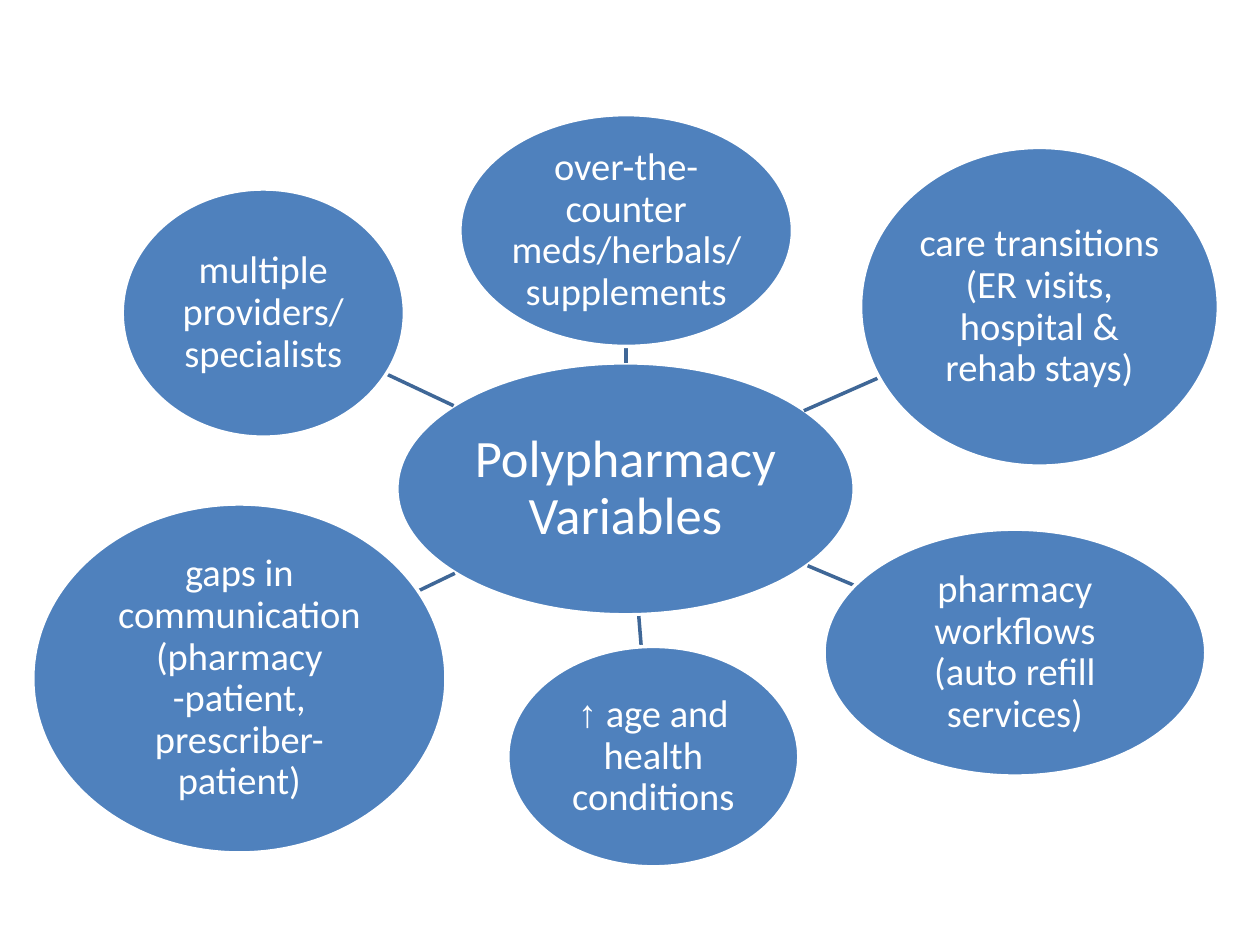
from dataclasses import dataclass

from pptx import Presentation
from pptx.dml.color import RGBColor
from pptx.enum.shapes import MSO_CONNECTOR, MSO_SHAPE
from pptx.enum.text import MSO_ANCHOR, PP_ALIGN
from pptx.oxml.ns import qn
from pptx.util import Inches, Pt


@dataclass(frozen=True)
class Theme:
    bubble: RGBColor = RGBColor(0x4F, 0x81, 0xBD)
    spoke: RGBColor = RGBColor(0x3F, 0x67, 0x97)
    white: RGBColor = RGBColor(0xFF, 0xFF, 0xFF)
    font: str = "Calibri"
    symbol_font: str = "Arial"
    hub_size: int = 30
    bubble_size: int = 22
    line_width: int = 2


class DiagramPage:
    def __init__(self, deck, theme):
        self.theme = theme
        self.page = deck.slides.add_slide(deck.slide_layouts[6])

    def bubble(self, spans, area, size):
        theme = self.theme
        shape = self.page.shapes.add_shape(MSO_SHAPE.OVAL, *map(Inches, area))
        shape.shadow.inherit = False
        shape.fill.solid()
        shape.fill.fore_color.rgb = theme.bubble
        shape.line.color.rgb = theme.white
        shape.line.width = Pt(theme.line_width)

        frame = shape.text_frame
        frame.word_wrap = True
        frame.vertical_anchor = MSO_ANCHOR.MIDDLE
        frame.margin_left = frame.margin_right = Inches(0.02)
        frame.margin_top = frame.margin_bottom = Inches(0.02)

        paragraph = frame.paragraphs[0]
        paragraph.alignment = PP_ALIGN.CENTER
        paragraph.line_spacing = 0.9
        paragraph.font.size = Pt(size)
        paragraph.font.color.rgb = theme.white
        paragraph.font.name = theme.font
        for index, line in enumerate(spans):
            if index:
                paragraph.add_line_break()
            for text in line:
                span = paragraph.add_run()
                span.text = text
                if text == "↑":
                    span.font.name = theme.symbol_font

    def spoke(self, start, end):
        line = self.page.shapes.add_connector(
            MSO_CONNECTOR.STRAIGHT, *map(Inches, start + end))
        line.line.color.rgb = self.theme.spoke
        line.line.width = Pt(self.theme.line_width)
        properties = line._element.spPr
        properties.append(properties.makeelement(qn("a:effectLst"), {}))


HUB = ([["Polypharmacy"], ["Variables"]], (3.15, 2.88, 3.63, 2))

VARIABLES = [
    ([["↑", " age and health conditions"]],
     (4.03, 5.13, 2.31, 1.75), (5.07, 4.89), (5.09, 5.14)),
    ([["over-the-counter meds/herbals/supplements"]],
     (3.65, 0.91, 2.64, 1.84), (4.97, 2.88), (4.97, 2.75)),
    ([["gaps in communication (pharmacy -patient, prescriber-patient)"]],
     (0.26, 4, 3.28, 2.77), (3.61, 4.55), (3.32, 4.69)),
    ([["care transitions (ER visits, hospital & rehab stays)"]],
     (6.83, 1.17, 2.84, 2.53), (6.38, 3.26), (6.97, 3)),
    ([["pharmacy workflows"], ["(auto refill services)"]],
     (6.54, 4.2, 3.03, 1.96), (6.41, 4.49), (6.79, 4.65)),
    ([["multiple providers/ specialists"]],
     (0.97, 1.5, 2.24, 1.97), (3.6, 3.22), (3.07, 2.97)),
]


def main():
    deck = Presentation()
    deck.slide_width = Inches(10)
    deck.slide_height = Inches(7.5)
    theme = Theme()
    diagram = DiagramPage(deck, theme)
    diagram.bubble(*HUB, theme.hub_size)
    for spans, area, start, end in VARIABLES:
        diagram.spoke(start, end)
        diagram.bubble(spans, area, theme.bubble_size)
    deck.save("out.pptx")


if __name__ == "__main__":
    main()
